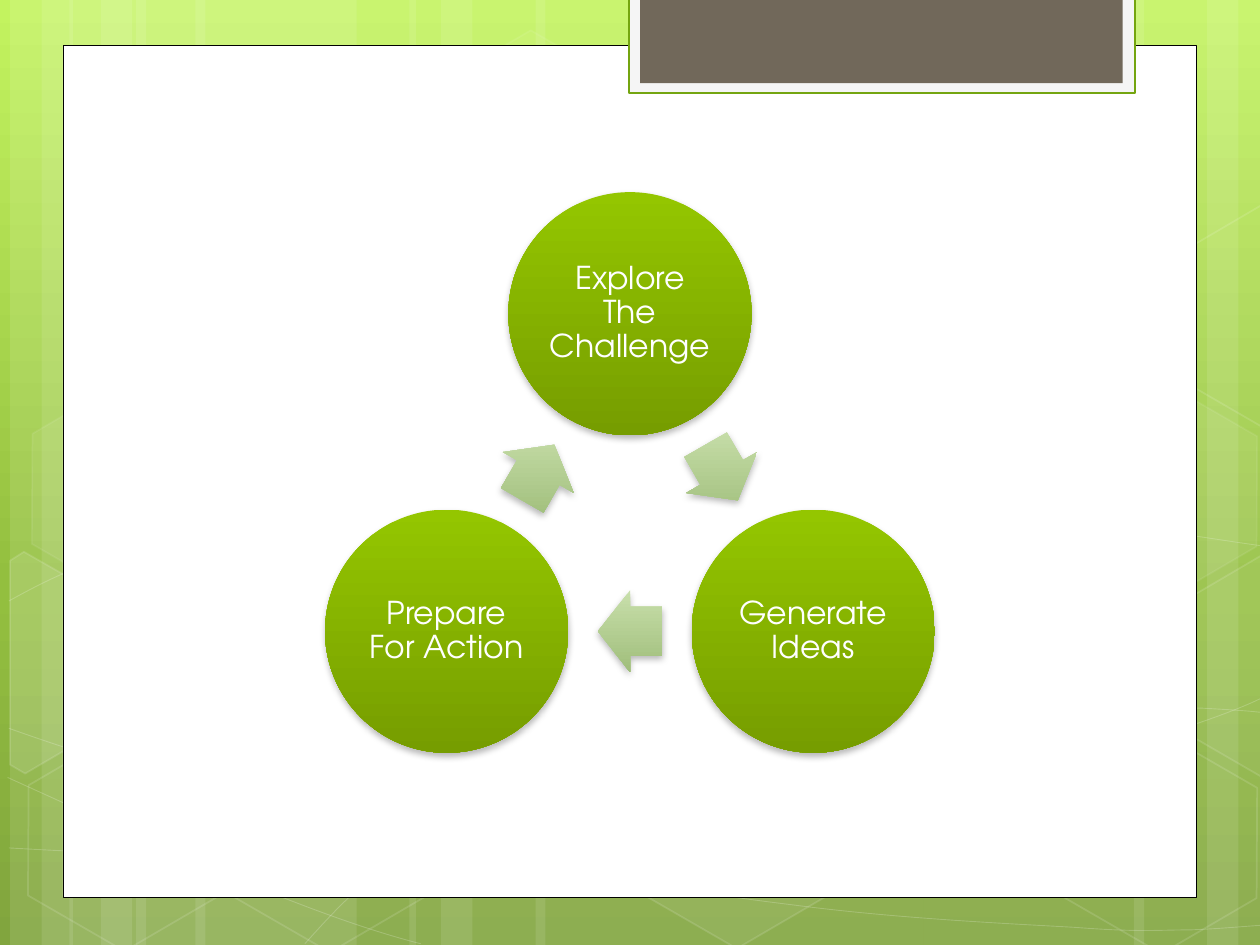
import copy
import math
import pptx
import pptx.util
import pptx.oxml
import pptx.oxml.ns
import pptx.dml.color
import pptx.enum.shapes
import pptx.enum.text

COLORS = {
    "white": "FFFFFF", "black": "000000", "tab": "F5F5F5", "tab_line": "74A510", "tab_inner": "71685A",
}
BACKGROUND = [(0, "C3F35F"), (62, "93BF3F"), (100, "81A53E")]
CIRCLE_FILL = [(0, "94C600"), (100, "769D00")]
ARROW_FILL = [(0, "C8DFAB"), (100, "A0BE7B")]
FONT = "TeX Gyre Adventor"
STEPS = ["Explore The Challenge", "Generate Ideas", "Prepare For Action"]

STRIPES = [
    (1.08, 1.75), (0.08, 0.5), (0.33, 0.83), (1.55, 1.75), (0.55, 0.5), (0.8, 0.83),
    (7.33, 1.75), (9.58, 0.5), (9, 0.83), (4.25, 3.08), (3.25, 0.5), (3.5, 0.83),
]
CURVES = [
    [(0.07, 6.73), (0.61, 6.76), (1.15, 6.79), (1.9, 6.78), (2.65, 6.77), (3.58, 6.75), (4.58, 6.65),
     (5.58, 6.55), (7, 6.36), (7.92, 6.17), (8.83, 5.98), (9.77, 5.68), (10.07, 5.51)],
    [(0.07, 4.77), (0.36, 4.61), (0.65, 4.46), (1.21, 4.31), (1.78, 4.16), (2.59, 3.94), (3.47, 3.87),
     (4.36, 3.8), (5.44, 3.79), (6.54, 3.87), (7.64, 3.95), (9.47, 4.26), (10.07, 4.34)],
    [(0.06, 6.17), (1.27, 6.72), (2.47, 7.27), (3.34, 7.49)],
    [(0.07, 5.78), (0.38, 5.89), (0.7, 6), (1.28, 6.16), (1.86, 6.31), (2.73, 6.56), (3.57, 6.73),
     (4.4, 6.9), (5.45, 7.08), (6.28, 7.18), (7.11, 7.29), (8, 7.33), (8.53, 7.36),
     (9.05, 7.4), (9.19, 7.38), (9.45, 7.38), (9.71, 7.37), (9.89, 7.35), (10.07, 7.34)],
    [(2.42, 7.49), (2.6, 7.29), (2.78, 7.09), (3.02, 6.91), (3.26, 6.73), (3.6, 6.53), (3.88, 6.39),
     (4.16, 6.25), (4.33, 6.19), (4.7, 6.09), (5.06, 5.99), (5.73, 5.85), (6.08, 5.78),
     (6.44, 5.71), (6.49, 5.71), (6.8, 5.69), (7.11, 5.66), (7.6, 5.63), (7.94, 5.62),
     (8.29, 5.61), (8.86, 5.62), (8.86, 5.62), (9.08, 5.62), (9.31, 5.62), (9.53, 5.62),
     (9.71, 5.63), (9.88, 5.64), (9.97, 5.65), (10.06, 5.66), (10.03, 5.65), (10.06, 5.66)],
]
HEXAGONS = [
    (3.34, 0.36, 4, 8), (4.97, 5.89, 6, 12), (0.11, 5.91, 0, 12), (0.14, 3.12, 7, 8),
    (1.74, 5.92, 0, 12), (8.34, 5.93, 0, 12), (8.34, 3.14, 7, 8),
]
CUT_HEXAGONS = [
    ([(0.08, 4.45), (0.19, 4.38), (0.96, 4.82), (0.95, 5.7), (0.2, 6.14), (0.08, 6.07)], 10),
    ([(9.26, 4.85), (10.01, 4.41), (10.09, 4.46), (10.09, 6.13), (10.02, 6.17), (9.26, 5.73)], 4),
    ([(9.26, 2.07), (10.01, 1.63), (10.1, 1.68), (10.09, 3.35), (10.02, 3.39), (9.26, 2.95)], 0),
]
PANELS = [
    ((0.5, 0.36, 9, 6.76), "white", "black", 0.5),
    ((4.99, -0.02, 4.02, 0.76), "tab", "tab_line", 1.25),
    ((5.08, -0.02, 3.83, 0.68), "tab_inner", None, 0),
]
CENTER, RADIUS = (5, 4.17), 1.68
CIRCLE, LABEL, ARROW = (1.93, 1.93), (1.36, 1.36), (0.51, 0.65)

KIND = pptx.enum.shapes.MSO_SHAPE
NS = pptx.oxml.ns.nsdecls("a")
qn = pptx.oxml.ns.qn


def inch(value):
    return pptx.util.Cm(value * 2.54)


def set_alpha(parent, percent):
    if percent < 100:
        color = parent.find(".//" + qn("a:srgbClr"))
        color.append(pptx.oxml.parse_xml(f'<a:alpha {NS} val="{percent * 1000}"/>'))


def paint(s, fill=None, fill_alpha=100, line=None, width=0, line_alpha=100):
    s.shadow.inherit = False
    if fill:
        s.fill.solid()
        s.fill.fore_color.rgb = pptx.dml.color.RGBColor.from_string(COLORS[fill])
        set_alpha(s._element.spPr.find(qn("a:solidFill")), fill_alpha)
    else:
        s.fill.background()
    if line:
        s.line.color.rgb = pptx.dml.color.RGBColor.from_string(COLORS[line])
        s.line.width = pptx.util.Pt(width)
        set_alpha(s._element.spPr.find(qn("a:ln")), line_alpha)
    else:
        s.line.fill.background()


def set_gradient(fill, properties, stops):
    fill.solid()
    stop_xml = "".join(f'<a:gs pos="{pos * 1000}"><a:srgbClr val="{c}"/></a:gs>' for pos, c in stops)
    properties.replace(properties.find(qn("a:solidFill")), pptx.oxml.parse_xml(
        f'<a:gradFill {NS} rotWithShape="0"><a:gsLst>{stop_xml}</a:gsLst>'
        '<a:lin ang="5400000" scaled="0"/></a:gradFill>'))


def add_shape(kind, x, y, w, h):
    return shapes.add_shape(kind, inch(x), inch(y), inch(w), inch(h))


def centered(point, size):
    return point[0] - size[0] / 2, point[1] - size[1] / 2, *size


def add_outline(points, close):
    points = [(inch(x), inch(y)) for x, y in points]
    builder = shapes.build_freeform(*points[0])
    builder.add_line_segments(points[1:], close=close)
    return builder.convert_to_shape()


def add_curve(points):
    s = add_outline(points, False)
    segments = s._element.findall(".//" + qn("a:lnTo"))
    for i in range(0, len(segments), 3):
        bezier = pptx.oxml.parse_xml(f"<a:cubicBezTo {NS}/>")
        segments[i].addprevious(bezier)
        for segment in segments[i:i + 3]:
            bezier.append(segment[0])
            segment.getparent().remove(segment)
    return s


def add_cycle_shape(kind, point, size, stops):
    s = add_shape(kind, *centered(point, size))
    paint(s)
    set_gradient(s.fill, s._element.spPr, stops)
    s._element.spPr.find(qn("a:effectLst")).append(copy.deepcopy(SHADOW))
    return s


def add_label(text, point):
    s = shapes.add_textbox(*map(inch, centered(point, LABEL)))
    tf = s.text_frame
    tf.word_wrap = True
    tf.vertical_anchor = pptx.enum.text.MSO_ANCHOR.MIDDLE
    tf.margin_left = tf.margin_right = tf.margin_top = tf.margin_bottom = inch(0.03)
    p = tf.paragraphs[0]
    p.alignment = pptx.enum.text.PP_ALIGN.CENTER
    p.line_spacing = 0.9
    r = p.add_run()
    r.text = text
    r.font.size = pptx.util.Pt(18)
    r.font.name = FONT
    r.font.color.rgb = pptx.dml.color.RGBColor.from_string(COLORS["white"])


SHADOW = pptx.oxml.parse_xml(
    f'<a:outerShdw {NS} blurRad="{pptx.util.Pt(4)}" dist="{pptx.util.Pt(2)}" dir="5400000" '
    f'rotWithShape="0"><a:srgbClr val="{COLORS["black"]}"><a:alpha val="28000"/></a:srgbClr></a:outerShdw>')

prs = pptx.Presentation()
prs.slide_width, prs.slide_height = inch(10), inch(7.5)
slide = prs.slides.add_slide(prs.slide_layouts[6])
shapes = slide.shapes
background = slide.background.fill
background.solid()
set_gradient(background, slide._element.find(".//" + qn("p:bgPr")), BACKGROUND)

for x, w in STRIPES:
    paint(add_shape(KIND.RECTANGLE, x, 0, w, 7.5), "white", 10)
for points in CURVES:
    paint(add_curve(points), line="white", width=0.5, line_alpha=20)
for x, y, fill_alpha, line_alpha in HEXAGONS:
    s = add_shape(KIND.HEXAGON, x, y, 1.75, 1.52)
    s.rotation = 30
    s.adjustments[0] = 0.285
    paint(s, "white" if fill_alpha else None, fill_alpha, "white", 1, line_alpha)
for points, fill_alpha in CUT_HEXAGONS:
    paint(add_outline(points, True), "white" if fill_alpha else None, fill_alpha, "white", 1, 12)
for box, fill, line, width in PANELS:
    paint(add_shape(KIND.RECTANGLE, *box), fill, line=line, width=width)

turn = 360 / len(STEPS)
centers = [(CENTER[0] + RADIUS * math.sin(math.radians(turn * i)),
            CENTER[1] - RADIUS * math.cos(math.radians(turn * i))) for i in range(len(STEPS))]
for i, text in enumerate(STEPS):
    here, following = centers[i], centers[(i + 1) % len(STEPS)]
    add_cycle_shape(KIND.OVAL, here, CIRCLE, CIRCLE_FILL)
    add_label(text, here)
    middle = [(a + b) / 2 for a, b in zip(here, following)]
    s = add_cycle_shape(KIND.RIGHT_ARROW, middle, ARROW, ARROW_FILL)
    s.rotation = turn * (i + 0.5)
    s.adjustments[0] = 0.6

prs.save("out.pptx")
